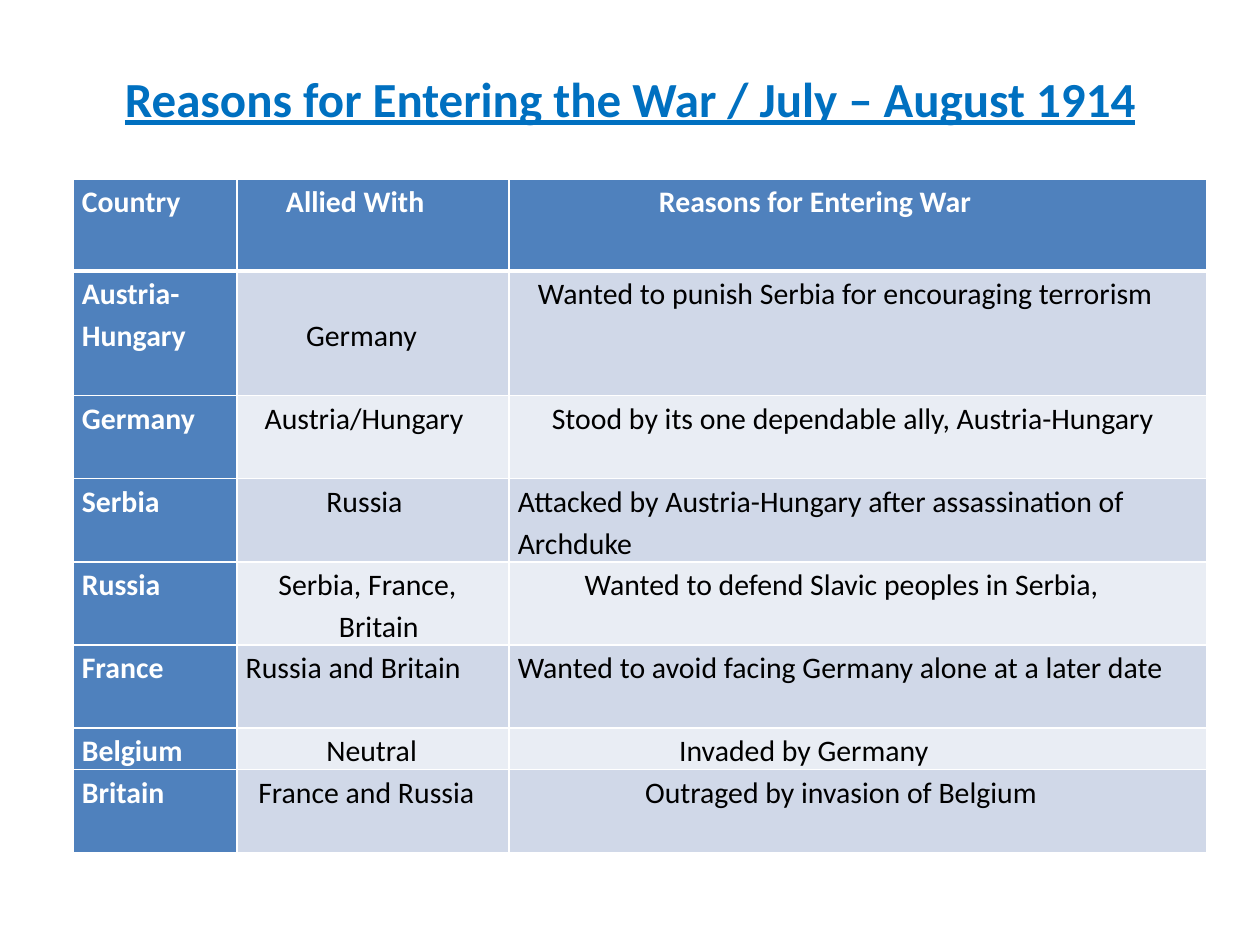
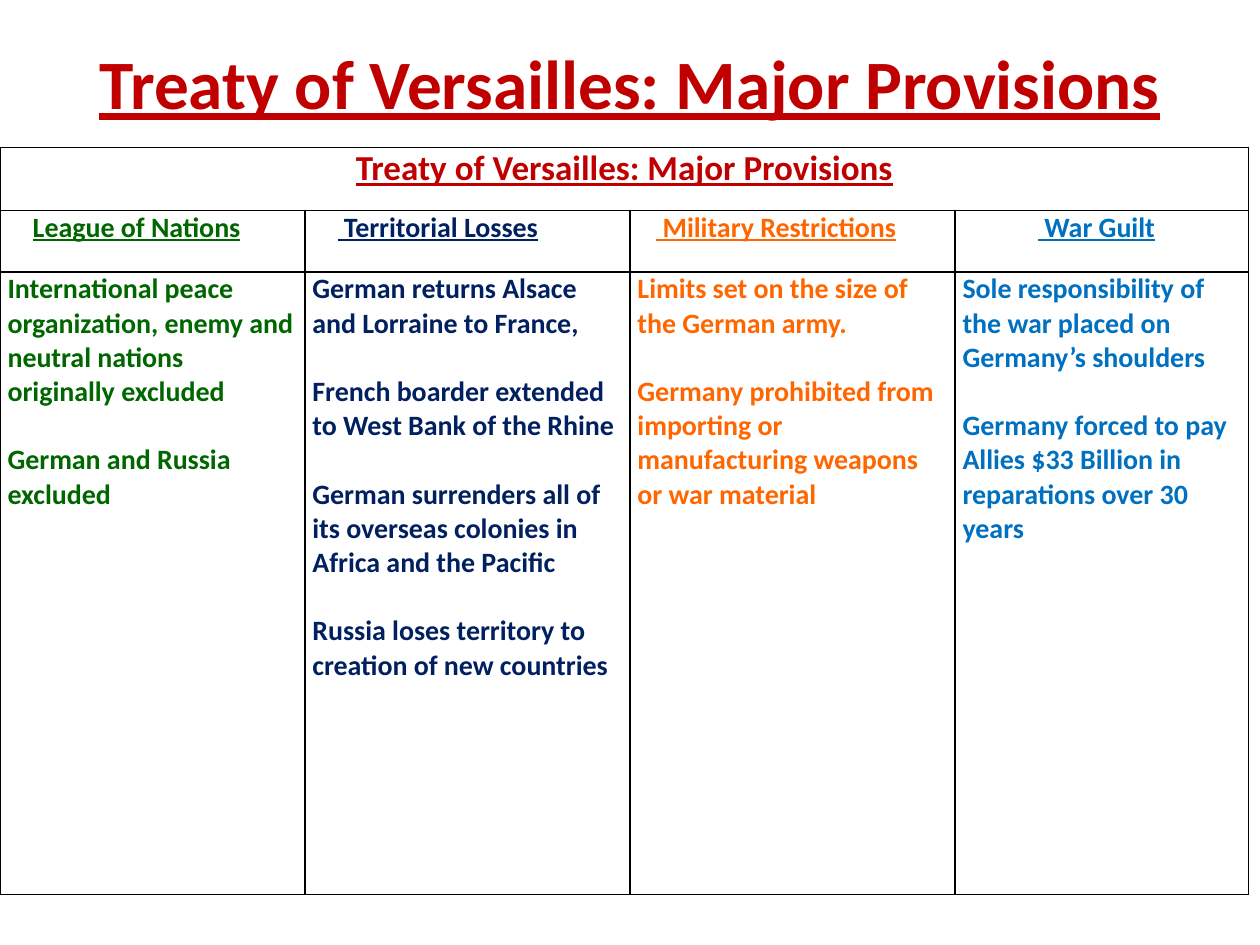
from lxml import etree
from pptx import Presentation
from pptx.dml.color import RGBColor
from pptx.enum.text import MSO_ANCHOR, PP_ALIGN
from pptx.oxml.ns import qn
from pptx.util import Inches, Pt

MIDDLE, TOP = MSO_ANCHOR.MIDDLE, MSO_ANCHOR.TOP
LEFT, CENTER = PP_ALIGN.LEFT, PP_ALIGN.CENTER
FACE = "Calibri"
WHITE, BLACK = "FFFFFF", "000000"
BLUE, RED = "0070C0", "C00000"
HEAD, BANDS = "4F81BD", ("D0D8E8", "E9EDF4")
TINTS = ("006600", "002060", "FF6600", BLUE)

REASONS = [
    [[("Country", 0)], [("Allied With", 0.32)],
     [("Reasons for Entering War", 1.12)]],
    [[("Austria-Hungary", 0)], [("Germany", 0.48)],
     [("Wanted to punish Serbia for encouraging terrorism", 0.16)]],
    [[("Germany", 0)], [("Austria/Hungary", 0.15)],
     [("Stood by its one dependable ally, Austria-Hungary", 0.27)]],
    [[("Serbia", 0)], [("Russia", 0.64)],
     [("Attacked by Austria-Hungary after assassination of Archduke", 0)]],
    [[("Russia", 0)], [("Serbia, France,", 0.26), ("Britain", 0.74)],
     [("Wanted to defend Slavic peoples in Serbia,", 0.53)]],
    [[("France", 0)], [("Russia and Britain", 0)],
     [("Wanted to avoid facing Germany alone at a later date", 0)]],
    [[("Belgium", 0)], [("Neutral", 0.64)],
     [("Invaded by Germany", 1.28)]],
    [[("Britain", 0)], [("France and Russia", 0.1)],
     [("Outraged by invasion of Belgium", 1.01)]],
]

TERMS = [
    ("League of Nations", 0.2,
     ["International peace organization, enemy and neutral nations "
      "originally excluded",
      "German and Russia excluded"]),
    (" Territorial Losses", 0.2,
     ["German returns Alsace and Lorraine to France,",
      "French boarder extended to West Bank of the Rhine",
      "German surrenders all of its overseas colonies in Africa and the Pacific",
      "Russia loses territory to creation of new countries"]),
    (" Military Restrictions", 0.15,
     ["Limits set on the size of the German army.",
      "Germany prohibited from importing or manufacturing weapons "
      "or war material"]),
    (" War Guilt", 0.6,
     ["Sole responsibility of the war placed on Germany’s shoulders",
      "Germany forced to pay Allies $33 Billion in reparations over 30 years"]),
]


def rgb(code):
    """Turn a hex string into a colour."""
    return RGBColor.from_string(code)


def style(par, size, color, bold=True, line=False):
    """Set the font of a paragraph."""
    font = par.font
    font.name, font.size = FACE, Pt(size)
    font.bold, font.underline = bold, line
    font.color.rgb = rgb(color)


def add_title(slide, text, height, size, color):
    """Add the underlined, centred title."""
    box = slide.shapes.add_textbox(
        Inches(0.5), Inches(0.3), Inches(9), Inches(height))
    frame = box.text_frame
    frame.word_wrap, frame.vertical_anchor = True, MIDDLE
    par = frame.paragraphs[0]
    par.text, par.alignment = text, CENTER
    style(par, size, color, line=True)


def add_grid(slide, left, top, cols, rows):
    """Add a plain table with the given column widths and row heights."""
    table = slide.shapes.add_table(
        len(rows), len(cols), Inches(left), Inches(top),
        Inches(sum(cols)), Inches(sum(rows))).table
    table.first_row = table.horz_banding = False
    for col, width in zip(table.columns, cols):
        col.width = Inches(width)
    for row, height in zip(table.rows, rows):
        row.height = Inches(height)
    return table


def set_edges(cell, color, **widths):
    """Draw the four borders of a cell, one point wide unless named."""
    props = cell._tc.get_or_add_tcPr()
    for side in "LRTB":
        edge = etree.SubElement(
            props, qn("a:ln" + side), w=str(Pt(widths.get(side, 1))))
        fill = etree.SubElement(edge, qn("a:solidFill"))
        etree.SubElement(fill, qn("a:srgbClr"), val=color)


def fill_cell(cell, lines, size, color, inset, bold=True, under=False,
              align=LEFT, space=1, gap=0):
    """Write lines of (text, indent) into a cell."""
    cell.margin_left = cell.margin_right = Inches(inset)
    cell.margin_top = cell.margin_bottom = 0
    frame = cell.text_frame
    for i, (text, indent) in enumerate(lines):
        par = frame.add_paragraph() if i else frame.paragraphs[0]
        par.text, par.alignment = text, align
        par.line_spacing, par.space_after = space, Pt(gap)
        par._p.get_or_add_pPr().set("marL", str(Inches(indent)))
        style(par, size, color, bold, under)


def add_reasons(slide):
    """Build the table of countries, allies and reasons."""
    grid = add_grid(slide, 0.58, 1.42, (1.3, 2.16, 5.54),
                    (0.73, 0.99, 0.66, 0.66, 0.66, 0.66, 0.33, 0.66))
    for r, row in enumerate(REASONS):
        for c, lines in enumerate(row):
            cell, key = grid.cell(r, c), r == 0 or c == 0
            set_edges(cell, WHITE, T=3 if r == 1 else 1, B=1 if r else 3)
            cell.fill.solid()
            cell.fill.fore_color.rgb = rgb(HEAD if key else BANDS[(r - 1) % 2])
            fill_cell(cell, lines, 17, WHITE if key else BLACK, 0.07,
                      bold=key, space=1.15)
    grid.cell(1, 1).vertical_anchor = MIDDLE


def add_terms(slide, title):
    """Build the table of treaty provisions."""
    grid = add_grid(slide, 0, 1.17, (2.42, 2.58, 2.58, 2.33),
                    (0.5, 0.49, 4.94))
    for cell in grid.iter_cells():
        set_edges(cell, BLACK)
        cell.fill.background()
        cell.vertical_anchor = TOP
    grid.cell(0, 0).merge(grid.cell(0, 3))
    fill_cell(grid.cell(0, 0), [(title, 0)], 20, RED, 0.06,
              under=True, align=CENTER)
    for c, ((name, indent, points), tint) in enumerate(zip(TERMS, TINTS)):
        fill_cell(grid.cell(1, c), [(name, indent)], 16, tint, 0.06, under=True)
        fill_cell(grid.cell(2, c), [(text, 0) for text in points],
                  16, tint, 0.06, gap=19.5)


def main():
    """Build and save both slides."""
    deck = Presentation()
    deck.slide_width, deck.slide_height = Inches(10), Inches(7.5)
    blank = deck.slide_layouts[6]

    slide = deck.slides.add_slide(blank)
    add_title(slide, "Reasons for Entering the War / July – August 1914",
              0.95, 28, BLUE)
    add_reasons(slide)

    slide = deck.slides.add_slide(blank)
    title = "Treaty of Versailles: Major Provisions"
    add_title(slide, title, 0.7, 39.6, RED)
    add_terms(slide, title)

    deck.save("out.pptx")


if __name__ == "__main__":
    main()
